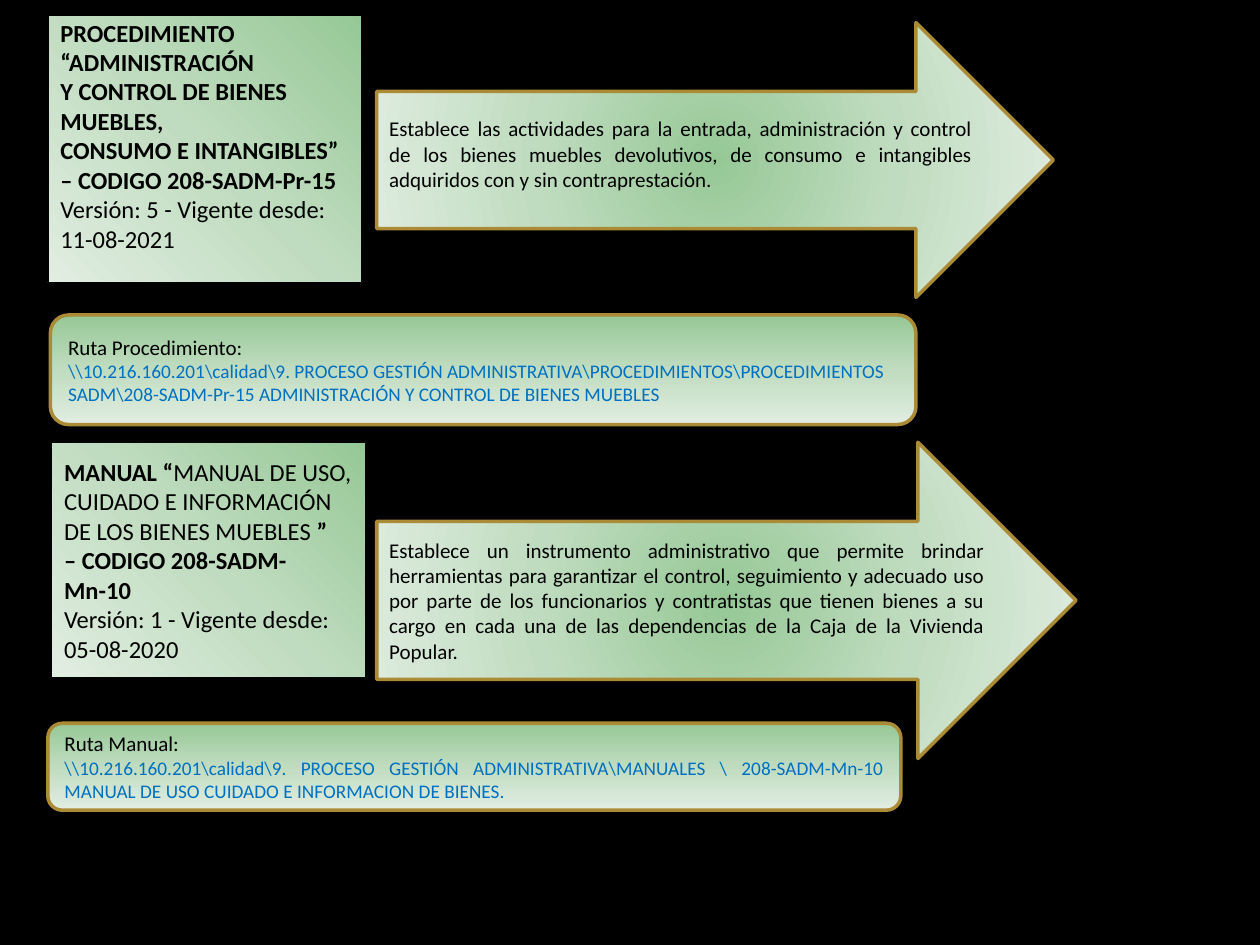
from pptx import Presentation
from pptx.dml.color import RGBColor
from pptx.enum.shapes import MSO_SHAPE
from pptx.enum.text import MSO_ANCHOR, PP_ALIGN
from pptx.oxml import parse_xml
from pptx.oxml.ns import nsdecls, qn
from pptx.util import Inches, Pt

RECTANGLE = MSO_SHAPE.RECTANGLE
ROUNDED = MSO_SHAPE.ROUNDED_RECTANGLE
ARROW = MSO_SHAPE.RIGHT_ARROW
TOP, MIDDLE = MSO_ANCHOR.TOP, MSO_ANCHOR.MIDDLE
LEFT, JUSTIFY = PP_ALIGN.LEFT, PP_ALIGN.JUSTIFY

BLACK = RGBColor(0x00, 0x00, 0x00)
GOLD = RGBColor(0xAC, 0x8B, 0x37)
BLUE = RGBColor(0x00, 0x70, 0xC0)
GREENS = {
    0: RGBColor(0x96, 0xC8, 0x96),
    50: RGBColor(0xC0, 0xDC, 0xC0),
    100: RGBColor(0xE1, 0xED, 0xE1),
}

DIAGONAL = '<a:lin ang="8100000" scaled="0"/>'
DOWNWARD = '<a:lin ang="5400000" scaled="0"/>'
RADIAL = ('<a:path path="circle">'
          '<a:fillToRect l="50000" t="50000" r="50000" b="50000"/></a:path>')


def fill_green(shape, direction):
    """Apply the three-stop green gradient, which needs XML."""
    stops = "".join(
        f'<a:gs pos="{percent * 1000}"><a:srgbClr val="{color}"/></a:gs>'
        for percent, color in GREENS.items())
    shape.fill.gradient()
    properties = shape._element.spPr
    properties.replace(
        properties.find(qn("a:gradFill")),
        parse_xml(f'<a:gradFill {nsdecls("a")} rotWithShape="1">'
                  f'<a:gsLst>{stops}</a:gsLst>{direction}</a:gradFill>'))


def add_panel(slide, kind, box, direction, line_color=GOLD, line_width=2):
    panel = slide.shapes.add_shape(kind, *(Inches(length) for length in box))
    panel.shadow.inherit = False
    fill_green(panel, direction)
    panel.line.color.rgb = line_color
    panel.line.width = Pt(line_width)
    frame = panel.text_frame
    frame.word_wrap = True
    frame.vertical_anchor = MIDDLE
    return frame


def add_paragraph(frame, text, size, align=LEFT, color=BLACK, bold=False):
    """Write into the empty first paragraph, or else append a new one."""
    first = frame.paragraphs[0]
    paragraph = frame.add_paragraph() if first.runs else first
    paragraph.alignment = align
    font = paragraph.font
    font.name, font.size, font.bold = "Calibri", Pt(size), bold
    font.color.rgb = color
    # Text may be one string or a list of (text, bold) pieces.
    pieces = [(text, None)] if isinstance(text, str) else text
    for words, run_bold in pieces:
        run = paragraph.add_run()
        run.text = words
        run.font.bold = run_bold


def add_document_box(slide, box, headings, version):
    frame = add_panel(slide, RECTANGLE, box, DIAGONAL, BLACK, 0.75)
    for heading in headings:
        add_paragraph(frame, heading, 14, bold=isinstance(heading, str))
    add_paragraph(frame, version, 14)
    return frame


def add_purpose_arrow(slide, box, purpose):
    frame = add_panel(slide, ARROW, box, RADIAL)
    add_paragraph(frame, purpose, 12, JUSTIFY)
    return frame


def add_route_box(slide, box, label, route, route_align):
    frame = add_panel(slide, ROUNDED, box, DOWNWARD)
    add_paragraph(frame, label, 12, JUSTIFY)
    add_paragraph(frame, route, 11, route_align, BLUE)


def main():
    presentation = Presentation()
    presentation.slide_width = Inches(10)
    presentation.slide_height = Inches(7.5)
    slide = presentation.slides.add_slide(presentation.slide_layouts[6])
    background = slide.background.fill
    background.solid()
    background.fore_color.rgb = BLACK

    procedure = add_document_box(
        slide, (0.38, 0.12, 2.49, 2.12),
        ["PROCEDIMIENTO “ADMINISTRACIÓN",
         "Y CONTROL DE BIENES MUEBLES,",
         "CONSUMO E INTANGIBLES”",
         "– CODIGO 208-SADM-Pr-15"],
        "Versión: 5 - Vigente desde: 11-08-2021")
    procedure.vertical_anchor = TOP
    procedure.margin_top = Inches(0.02)

    procedure_purpose = add_purpose_arrow(
        slide, (2.99, 0.18, 5.37, 2.18),
        "Establece las actividades para la entrada, administración y control "
        "de los bienes muebles devolutivos, de consumo e intangibles "
        "adquiridos con y sin contraprestación.")
    procedure_purpose.margin_bottom = Inches(0.15)

    add_purpose_arrow(
        slide, (2.99, 3.51, 5.55, 2.51),
        "Establece un instrumento administrativo que permite brindar "
        "herramientas para garantizar el control, seguimiento y adecuado uso "
        "por parte de los funcionarios y contratistas que tienen bienes a su "
        "cargo en cada una de las dependencias de la Caja de la Vivienda "
        "Popular.")

    add_document_box(
        slide, (0.41, 3.51, 2.49, 1.87),
        [[("MANUAL “", True),
          ("MANUAL DE USO, CUIDADO E INFORMACIÓN DE LOS BIENES MUEBLES ", False),
          ("”", True)],
         "– CODIGO 208-SADM-Mn-10"],
        "Versión: 1 - Vigente desde: 05-08-2020")

    add_route_box(
        slide, (0.4, 2.5, 6.87, 0.87), "Ruta Procedimiento:",
        r"\\10.216.160.201\calidad\9. PROCESO GESTIÓN ADMINISTRATIVA"
        r"\PROCEDIMIENTOS\PROCEDIMIENTOS SADM\208-SADM-Pr-15 "
        "ADMINISTRACIÓN Y CONTROL DE BIENES MUEBLES", LEFT)

    add_route_box(
        slide, (0.38, 5.74, 6.77, 0.69), "Ruta Manual:",
        r"\\10.216.160.201\calidad\9. PROCESO GESTIÓN ADMINISTRATIVA"
        r"\MANUALES \ 208-SADM-Mn-10 "
        "MANUAL DE USO CUIDADO E INFORMACION DE BIENES.", JUSTIFY)

    presentation.save("out.pptx")


if __name__ == "__main__":
    main()
